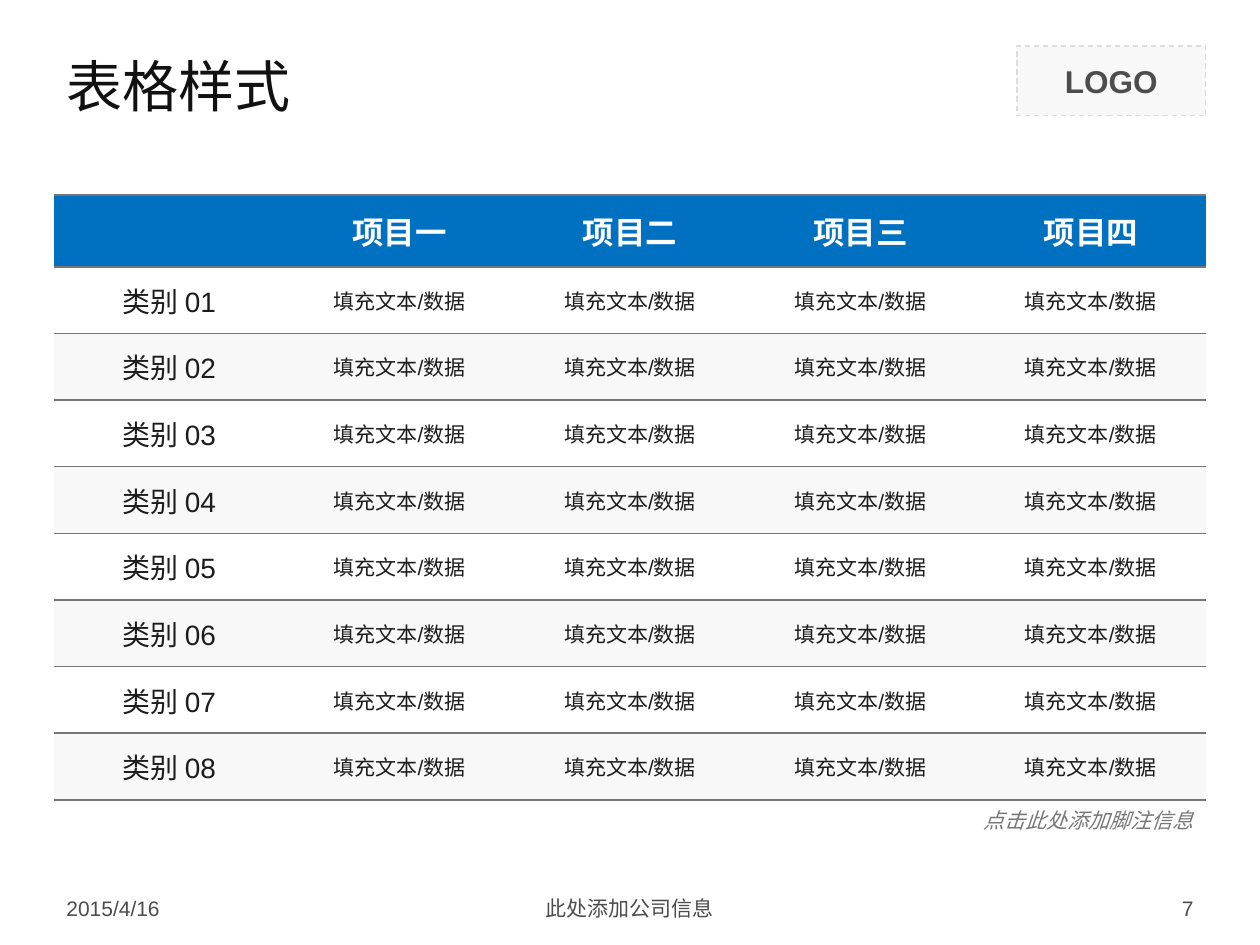
from lxml.etree import SubElement
from pptx import Presentation
from pptx.dml.color import RGBColor
from pptx.enum.dml import MSO_LINE
from pptx.enum.shapes import MSO_SHAPE
from pptx.enum.text import MSO_ANCHOR as Anchor, MSO_AUTO_SIZE as AutoSize, PP_ALIGN as Align
from pptx.oxml.ns import qn
from pptx.util import Cm, Pt

COLORS = {
    "header": "0070C0",
    "white": "FFFFFF",
    "band": "F8F8F8",
    "rule": "777777",
    "dash": "DDDDDD",
    "logo": "4D4D4D",
    "title": "111111",
    "text": "1C1C1C",
    "footer": "4C4C4C",
}
LEFT, WIDTH = 1.09, 23.22
RIGHT = LEFT + WIDTH
HEADER_HEIGHT, TABLE_HEIGHT = 1.45, 12.2
FOOTER_TOP, FOOTER_HEIGHT = 17.93, 0.74


def color(name):
    return RGBColor.from_string(COLORS[name])


class SlideBuilder:
    def __init__(self, page, font="Arial"):
        self.page = page
        self.font = font

    def set_text(self, frame, text, size, ink, align=Align.LEFT, bold=False, italic=False,
                 font=None):
        para = frame.paragraphs[0]
        para.text = text
        para.alignment = align
        para.font.name = font or self.font
        para.font.size = Pt(size)
        para.font.bold = bold
        para.font.italic = italic
        para.font.color.rgb = color(ink)

    def title(self, text, left, top, width, height):
        box = self.page.shapes.title
        box.left, box.top, box.width, box.height = Cm(left), Cm(top), Cm(width), Cm(height)
        box.text_frame.vertical_anchor = Anchor.MIDDLE
        self.set_text(box.text_frame, text, 32, "title", font="Montserrat")

    def text(self, text, left, top, width, height, ink, align, italic=False, wrap=True):
        box = self.page.shapes.add_textbox(Cm(left), Cm(top), Cm(width), Cm(height))
        frame = box.text_frame
        frame.word_wrap = wrap
        if wrap:
            frame.vertical_anchor = Anchor.MIDDLE
        else:
            frame.auto_size = AutoSize.SHAPE_TO_FIT_TEXT
        self.set_text(frame, text, 12, ink, align, italic=italic)

    def logo_frame(self, text, left, top, width, height):
        box = self.page.shapes.add_shape(
            MSO_SHAPE.RECTANGLE, Cm(left), Cm(top), Cm(width), Cm(height))
        box.shadow.inherit = False
        box.fill.solid()
        box.fill.fore_color.rgb = color("band")
        box.line.color.rgb = color("dash")
        box.line.width = Pt(0.75)
        box.line.dash_style = MSO_LINE.DASH
        box.text_frame.vertical_anchor = Anchor.MIDDLE
        self.set_text(box.text_frame, text, 18, "logo", Align.CENTER, bold=True)

    def table(self, rows, left, top, width, height, header_height):
        """Draw rows under a coloured header, with horizontal rules only."""
        table = self.page.shapes.add_table(
            len(rows), len(rows[0]), Cm(left), Cm(top), Cm(width), Cm(height)).table
        table.horz_banding = False
        for column in table.columns:
            column.width = Cm(width / len(rows[0]))
        body_height = (height - header_height) / (len(rows) - 1)
        for r, values in enumerate(rows):
            table.rows[r].height = Cm(body_height if r else header_height)
            fill = ("band" if r % 2 == 0 else "white") if r else "header"
            for c, value in enumerate(values):
                cell = table.cell(r, c)
                self.rule(cell)
                cell.fill.solid()
                cell.fill.fore_color.rgb = color(fill)
                cell.vertical_anchor = Anchor.MIDDLE
                if r == 0:
                    size, ink = 18, "white"
                else:
                    size, ink = (12 if c else 16), "text"
                self.set_text(cell.text_frame, value, size, ink, Align.CENTER, bold=r == 0)

    def rule(self, cell):
        """Line the cell above and below, leaving its sides open."""
        properties = cell._tc.get_or_add_tcPr()
        for side in ("a:lnL", "a:lnR"):
            SubElement(SubElement(properties, qn(side)), qn("a:noFill"))
        for side in ("a:lnT", "a:lnB"):
            line = SubElement(properties, qn(side), w=str(Pt(1)))
            fill = SubElement(line, qn("a:solidFill"))
            SubElement(fill, qn("a:srgbClr"), val=COLORS["rule"])


def main():
    deck = Presentation()
    deck.slide_width, deck.slide_height = Cm(25.4), Cm(19.05)
    builder = SlideBuilder(deck.slides.add_slide(deck.slide_layouts[5]))

    builder.logo_frame("LOGO", RIGHT - 3.81, 0.93, 3.81, 1.4)
    builder.title("表格样式", LEFT, 0.72, WIDTH, 2)

    header = [""] + [f"项目{numeral}" for numeral in "一二三四"]
    body = [[f"类别 {number:02}"] + ["填充文本/数据"] * 4 for number in range(1, 9)]
    builder.table([header] + body, LEFT, 3.93, WIDTH, TABLE_HEIGHT, HEADER_HEIGHT)

    side, middle = 5.92, 8.05
    footers = [
        ("2015/4/16", LEFT, side, Align.LEFT),
        ("此处添加公司信息", LEFT + (WIDTH - middle) / 2, middle, Align.CENTER),
        ("7", RIGHT - side, side, Align.RIGHT),
    ]
    for text, left, width, align in footers:
        builder.text(text, left, FOOTER_TOP, width, FOOTER_HEIGHT, "footer", align)
    builder.text("点击此处添加脚注信息", RIGHT - 4.78, 16.15, 4.78, 0.77, "rule",
                 Align.RIGHT, italic=True, wrap=False)

    deck.save("out.pptx")


if __name__ == "__main__":
    main()
